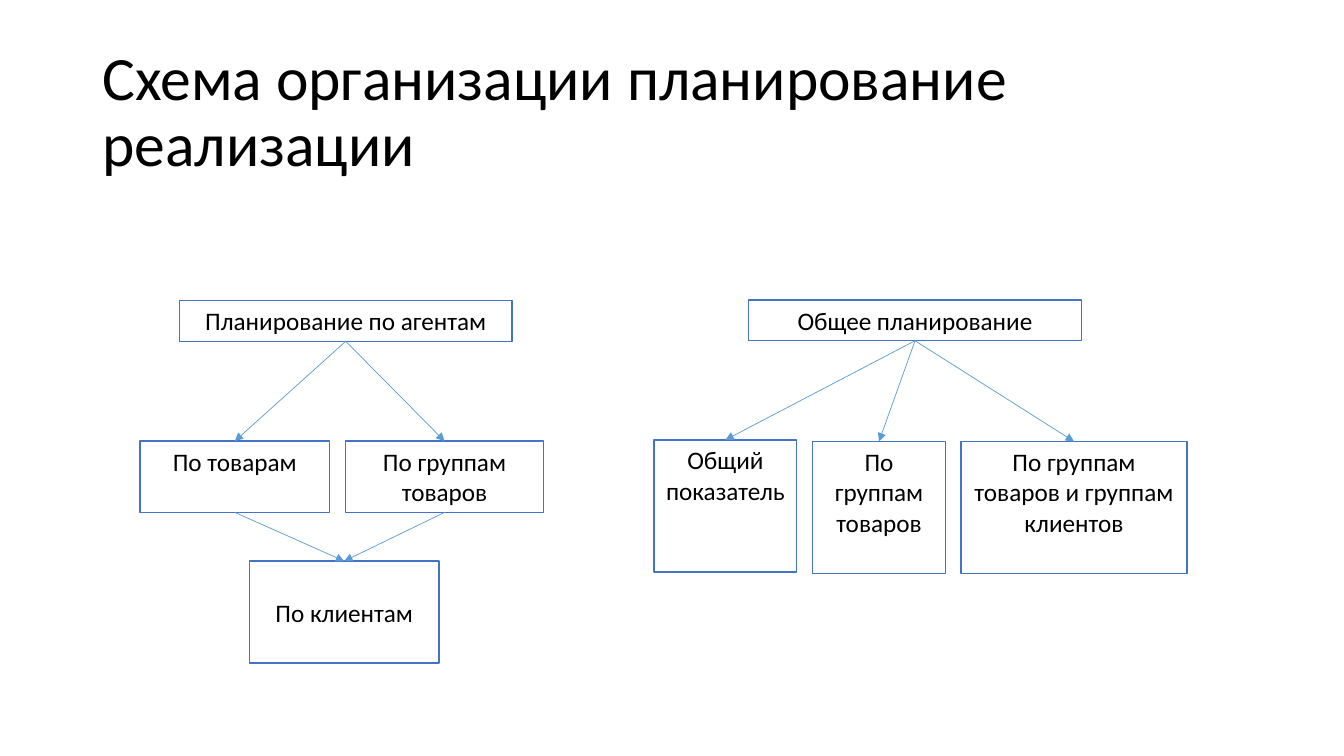
from lxml import etree
from pptx import Presentation
from pptx.dml.color import RGBColor
from pptx.enum.shapes import MSO_CONNECTOR, MSO_SHAPE
from pptx.enum.text import MSO_ANCHOR, PP_ALIGN
from pptx.oxml.ns import qn
from pptx.util import Pt

RECT, STRAIGHT = MSO_SHAPE.RECTANGLE, MSO_CONNECTOR.STRAIGHT
TOP, MIDDLE = MSO_ANCHOR.TOP, MSO_ANCHOR.MIDDLE
LEFT, CENTER = PP_ALIGN.LEFT, PP_ALIGN.CENTER
BLACK = RGBColor(0x00, 0x00, 0x00)
WHITE = RGBColor(0xFF, 0xFF, 0xFF)
BORDER = RGBColor(0x44, 0x72, 0xC4)
ARROW = RGBColor(0x5B, 0x9B, 0xD5)
BOTTOM_SIDE, TOP_SIDE = 2, 0

TITLE = "Схема организации планирование реализации"
TITLE_BOX = (66, 28.75, 828, 104.4)
TITLE_FONT = {"name": "Calibri", "size": Pt(44)}
BOX_FONT = {"name": "Calibri", "size": Pt(18)}

BOXES = {
    "agents": ("Планирование по агентам", 128.2, 214.7, 237.6, 29.1, TOP),
    "general": ("Общее планирование", 534.8, 214.3, 237.6, 29.1, TOP),
    "groups": ("По группам товаров", 247, 315.1, 141.1, 50.9, TOP),
    "goods": ("По товарам", 100, 315.1, 135.4, 50.9, TOP),
    "clients": ("По клиентам", 178.2, 400.8, 135.4, 72.7, MIDDLE),
    "total": ("Общий показатель", 467.2, 314.2, 102, 94.5, TOP),
    "by_groups": ("По группам товаров", 580.4, 315.3, 95, 94.5, TOP),
    "by_both": ("По группам товаров и группам клиентов", 686.4, 315.3, 161.5, 94.5, TOP),
}
ARROWS = [
    ("agents", "goods"), ("agents", "groups"),
    ("goods", "clients"), ("groups", "clients"),
    ("general", "by_both"), ("general", "total"), ("general", "by_groups"),
]


def write(s, text, anchor, align, font):
    tf = s.text_frame
    tf.word_wrap = True
    tf.vertical_anchor = anchor
    p = tf.paragraphs[0]
    p.alignment = align
    r = p.add_run()
    r.text = text
    for key, value in font.items():
        setattr(r.font, key, value)
    r.font.color.rgb = BLACK
    return p


def add_box(shapes, text, x, y, w, h, anchor):
    s = shapes.add_shape(RECT, Pt(x), Pt(y), Pt(w), Pt(h))
    s.shadow.inherit = False
    s.fill.solid()
    s.fill.fore_color.rgb = WHITE
    s.line.color.rgb = BORDER
    s.line.width = Pt(1)
    write(s, text, anchor, CENTER, BOX_FONT)
    return s


def add_arrow(shapes, start, end):
    c = shapes.add_connector(STRAIGHT, 0, 0, 0, 0)
    c.begin_connect(start, BOTTOM_SIDE)
    c.end_connect(end, TOP_SIDE)
    c.line.color.rgb = ARROW
    c.line.width = Pt(0.5)
    etree.SubElement(c.line._get_or_add_ln(), qn("a:tailEnd"), type="triangle")
    etree.SubElement(c._element.spPr, qn("a:effectLst"))


def main():
    prs = Presentation()
    prs.slide_width, prs.slide_height = Pt(960), Pt(540)
    shapes = prs.slides.add_slide(prs.slide_layouts[6]).shapes
    title = shapes.add_textbox(*map(Pt, TITLE_BOX))
    write(title, TITLE, MIDDLE, LEFT, TITLE_FONT).line_spacing = 0.9
    boxes = {name: add_box(shapes, *box) for name, box in BOXES.items()}
    for start, end in ARROWS:
        add_arrow(shapes, boxes[start], boxes[end])
    prs.save("out.pptx")


if __name__ == "__main__":
    main()
